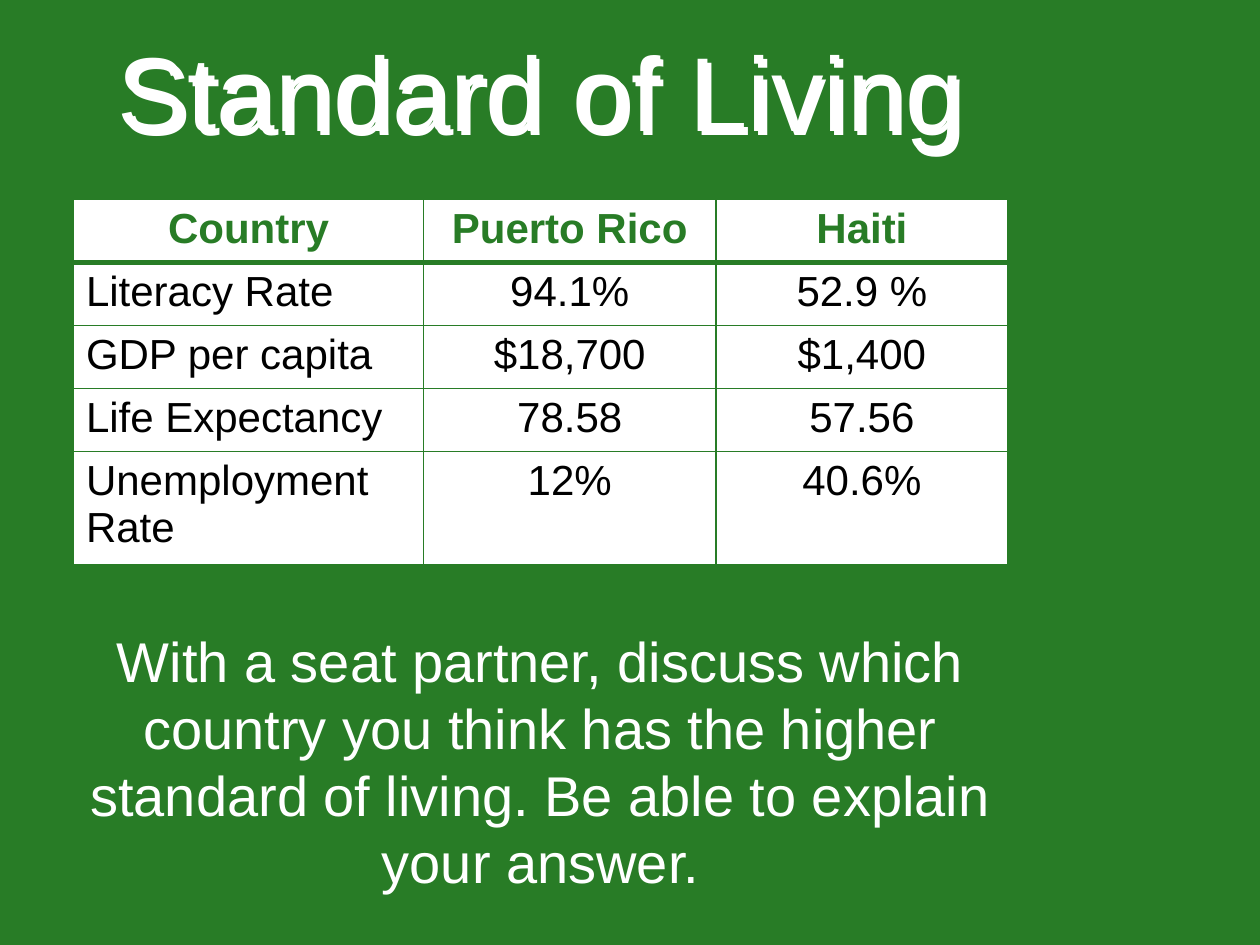
from lxml import etree
from pptx import Presentation
from pptx.dml.color import RGBColor
from pptx.enum.text import MSO_ANCHOR, PP_ALIGN
from pptx.oxml import parse_xml
from pptx.oxml.ns import nsdecls, qn
from pptx.util import Cm, Pt

# Content
TITLE = "Standard of Living"
INDICATORS = [
    ("Country", "Puerto Rico", "Haiti"),
    ("Literacy Rate", "94.1%", "52.9 %"),
    ("GDP per capita", "$18,700", "$1,400"),
    ("Life Expectancy", "78.58", "57.56"),
    ("Unemployment Rate", "12%", "40.6%"),
]
TASK = ("With a seat partner, discuss which country you think has the higher "
        "standard of living. Be able to explain your answer.")

# Look
FONT = "Arial"
GREEN = RGBColor(0x28, 0x7C, 0x26)
WHITE = RGBColor(0xFF, 0xFF, 0xFF)
BLACK = RGBColor(0x00, 0x00, 0x00)
COLUMN_WIDTHS = [Cm(7.06), Cm(5.89), Cm(5.89)]
ROW_HEIGHTS = [Cm(1.27)] * 4 + [Cm(2.29)]


def write(frame, text, size, color, align=PP_ALIGN.CENTER, bold=False):
    frame.text = text
    paragraph = frame.paragraphs[0]
    paragraph.alignment = align
    font = paragraph.runs[0].font
    font.name, font.size, font.bold = FONT, Pt(size), bold
    font.color.rgb = color


def add_border(cell, side, width):
    line = etree.SubElement(cell._tc.get_or_add_tcPr(), qn(f"a:ln{side}"), w=str(Pt(width)))
    fill = etree.SubElement(line, qn("a:solidFill"))
    etree.SubElement(fill, qn("a:srgbClr"), val=str(GREEN))


def main():
    prs = Presentation()
    prs.slide_width, prs.slide_height = Cm(25.4), Cm(19.05)
    slide = prs.slides.add_slide(prs.slide_layouts[5])
    slide.background.fill.solid()
    slide.background.fill.fore_color.rgb = GREEN

    # Title with a white shadow
    title = slide.shapes.title
    title.left, title.top, title.width, title.height = Cm(0.43), Cm(0.64), Cm(20.96), Cm(2.34)
    write(title.text_frame, TITLE, 60, WHITE)
    title.text_frame.vertical_anchor = MSO_ANCHOR.MIDDLE
    title._element.spPr.append(parse_xml(
        f'<a:effectLst {nsdecls("a")}><a:outerShdw dist="{Pt(2.8)}" dir="2700000">'
        f'<a:srgbClr val="{WHITE}"/></a:outerShdw></a:effectLst>'))

    # Table of indicators
    table = slide.shapes.add_table(
        len(INDICATORS), len(COLUMN_WIDTHS), Cm(1.48), Cm(4.02),
        sum(COLUMN_WIDTHS), sum(ROW_HEIGHTS)).table
    for column, width in zip(table.columns, COLUMN_WIDTHS):
        column.width = width
    for r, (row, height) in enumerate(zip(INDICATORS, ROW_HEIGHTS)):
        table.rows[r].height = height
        for c, value in enumerate(row):
            cell = table.cell(r, c)
            header = r == 0
            centred = header or c > 0
            write(cell.text_frame, value, 24, GREEN if header else BLACK,
                  PP_ALIGN.CENTER if centred else PP_ALIGN.LEFT, header)
            for side in "LRTB":
                thick = (r, side) in ((0, "B"), (1, "T"))
                add_border(cell, side, 3 if thick else 1)
            cell.fill.solid()
            cell.fill.fore_color.rgb = WHITE

    # Discussion task
    task = slide.shapes.add_textbox(Cm(0.84), Cm(12.5), Cm(20.12), Cm(5.74))
    task.text_frame.word_wrap = True
    write(task.text_frame, TASK, 32, WHITE)

    prs.save("out.pptx")


if __name__ == "__main__":
    main()
